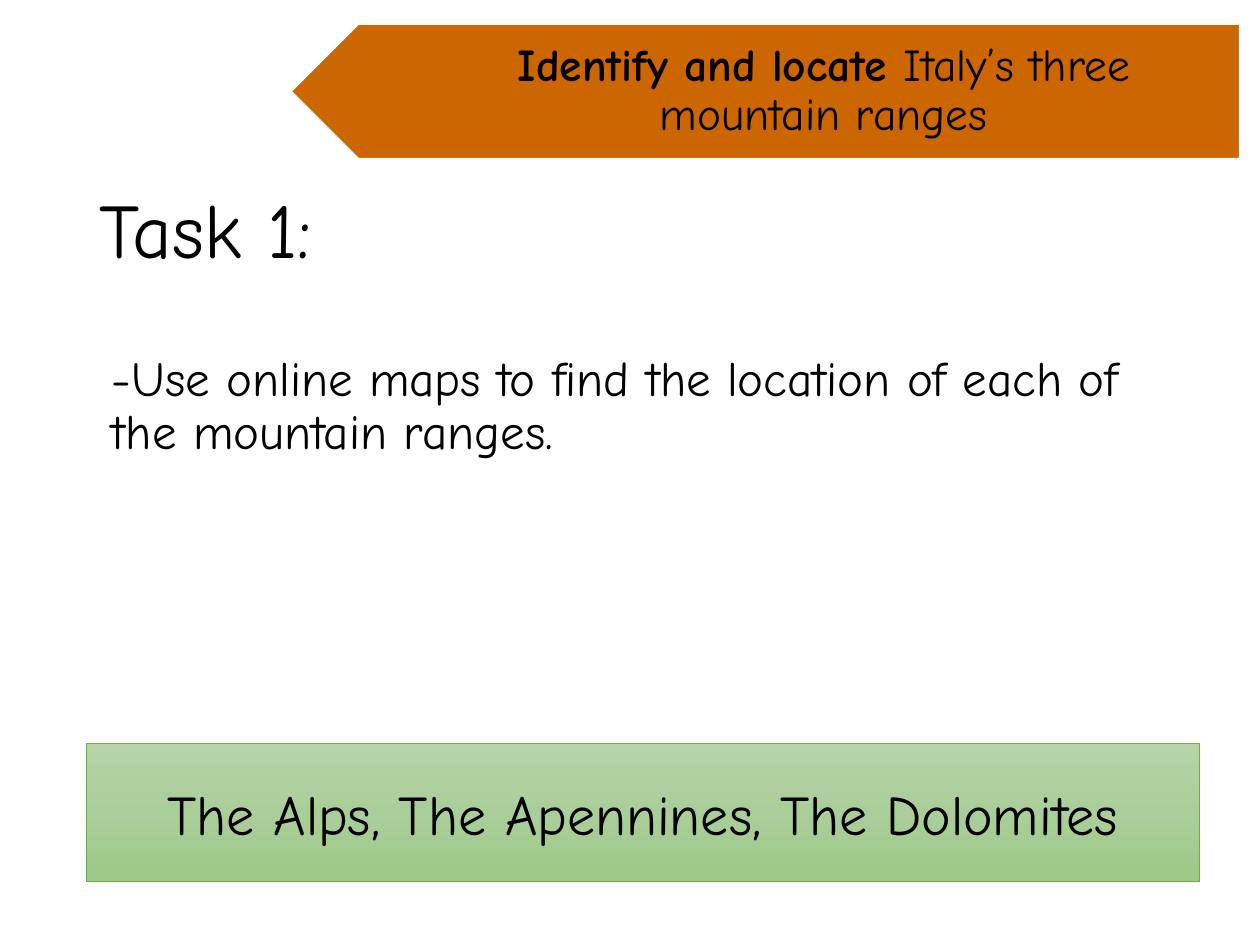
import copy
from dataclasses import dataclass

import pptx
import pptx.dml.color
import pptx.enum.shapes
import pptx.enum.text
import pptx.util
from pptx.util import Inches

RGBColor = pptx.dml.color.RGBColor
Shape = pptx.enum.shapes.MSO_SHAPE
Anchor = pptx.enum.text.MSO_ANCHOR
Align = pptx.enum.text.PP_ALIGN

BLACK = RGBColor(0x00, 0x00, 0x00)
WHITE = RGBColor(0xFF, 0xFF, 0xFF)
ORANGE = RGBColor(0xCC, 0x66, 0x00)
GREEN_EDGE = RGBColor(0x70, 0xAD, 0x47)
GREEN_STOPS = (
    (0, RGBColor(0xB5, 0xD5, 0xA7)),
    (0.5, RGBColor(0xAA, 0xCE, 0x9A)),
    (1, RGBColor(0x9C, 0xC9, 0x87)),
)
FONT = "Comic Neue"


@dataclass(frozen=True)
class Box:
    left: float
    top: float
    width: float
    height: float

    def lengths(self) -> tuple:
        return tuple(Inches(v) for v in (self.left, self.top, self.width, self.height))


@dataclass(frozen=True)
class Wording:
    runs: tuple[tuple[str, bool], ...]  # text, bold
    size: float
    anchor: Anchor = Anchor.MIDDLE
    align: Align = Align.LEFT
    line_spacing: float = 0.9
    insets: tuple[float, float, float, float] = (0.1, 0.05, 0.1, 0.05)


def write(shape, wording: Wording) -> None:
    frame = shape.text_frame
    left, top, right, bottom = (Inches(v) for v in wording.insets)
    frame_format = {
        "word_wrap": True, "vertical_anchor": wording.anchor,
        "margin_left": left, "margin_top": top,
        "margin_right": right, "margin_bottom": bottom,
    }
    for name, value in frame_format.items():
        setattr(frame, name, value)
    paragraph = frame.paragraphs[0]
    paragraph.alignment = wording.align
    paragraph.line_spacing = wording.line_spacing
    for text, bold in wording.runs:
        run = paragraph.add_run()
        run.text = text
        font_format = {"name": FONT, "size": pptx.util.Pt(wording.size), "bold": bold}
        for name, value in font_format.items():
            setattr(run.font, name, value)
        run.font.color.rgb = BLACK


def add_text(shapes, box: Box, wording: Wording) -> None:
    write(shapes.add_textbox(*box.lengths()), wording)


def add_outlined(shapes, kind: Shape, box: Box, edge: RGBColor, edge_width: float):
    shape = shapes.add_shape(kind, *box.lengths())
    shape.shadow.inherit = False
    shape.line.color.rgb = edge
    shape.line.width = pptx.util.Pt(edge_width)
    return shape


def fill_gradient(shape, stops: tuple) -> None:
    """Fill from top to bottom; the default gradient has two stops, so one is added."""
    fill = shape.fill
    fill.gradient()
    fill.gradient_angle = 270
    stop_list = fill._fill._gradFill.gsLst
    stop_list.insert(1, copy.deepcopy(stop_list[0]))
    for stop, (position, color) in zip(fill.gradient_stops, stops):
        stop.position = position
        stop.color.rgb = color


def main() -> None:
    deck = pptx.Presentation()
    deck.slide_width, deck.slide_height = Inches(10), Inches(7.5)
    slide = deck.slides.add_slide(deck.slide_layouts[6])

    add_text(slide.shapes, Box(0.69, 1.13, 8.62, 1.45), Wording((("Task 1:", False),), 44))
    instruction = "-Use online maps to find the location of each of the mountain ranges."
    add_text(slide.shapes, Box(0.79, 2.76, 8.62, 4.46),
             Wording(((instruction, False),), 28, anchor=Anchor.TOP))

    ranges = add_outlined(slide.shapes, Shape.RECTANGLE, Box(0.69, 5.9, 8.83, 1.1),
                          GREEN_EDGE, 0.5)
    fill_gradient(ranges, GREEN_STOPS)
    write(ranges, Wording((("The Alps, The Apennines, The Dolomites", False),), 32,
                          align=Align.CENTER, line_spacing=1.0))

    objective = slide.shapes.add_group_shape()
    arrow = add_outlined(objective.shapes, Shape.PENTAGON, Box(2.31, 0.19, 7.53, 1.07),
                         WHITE, 1)
    arrow.rotation = 180
    arrow.fill.solid()
    arrow.fill.fore_color.rgb = ORANGE
    add_text(objective.shapes, Box(2.78, 0.19, 7.07, 1.07),
             Wording((("Identify and locate ", True), ("Italy’s three mountain ranges", False)),
                     26, align=Align.CENTER, insets=(0.65, 0.11, 0.2, 0.11)))

    deck.save("out.pptx")


if __name__ == "__main__":
    main()
